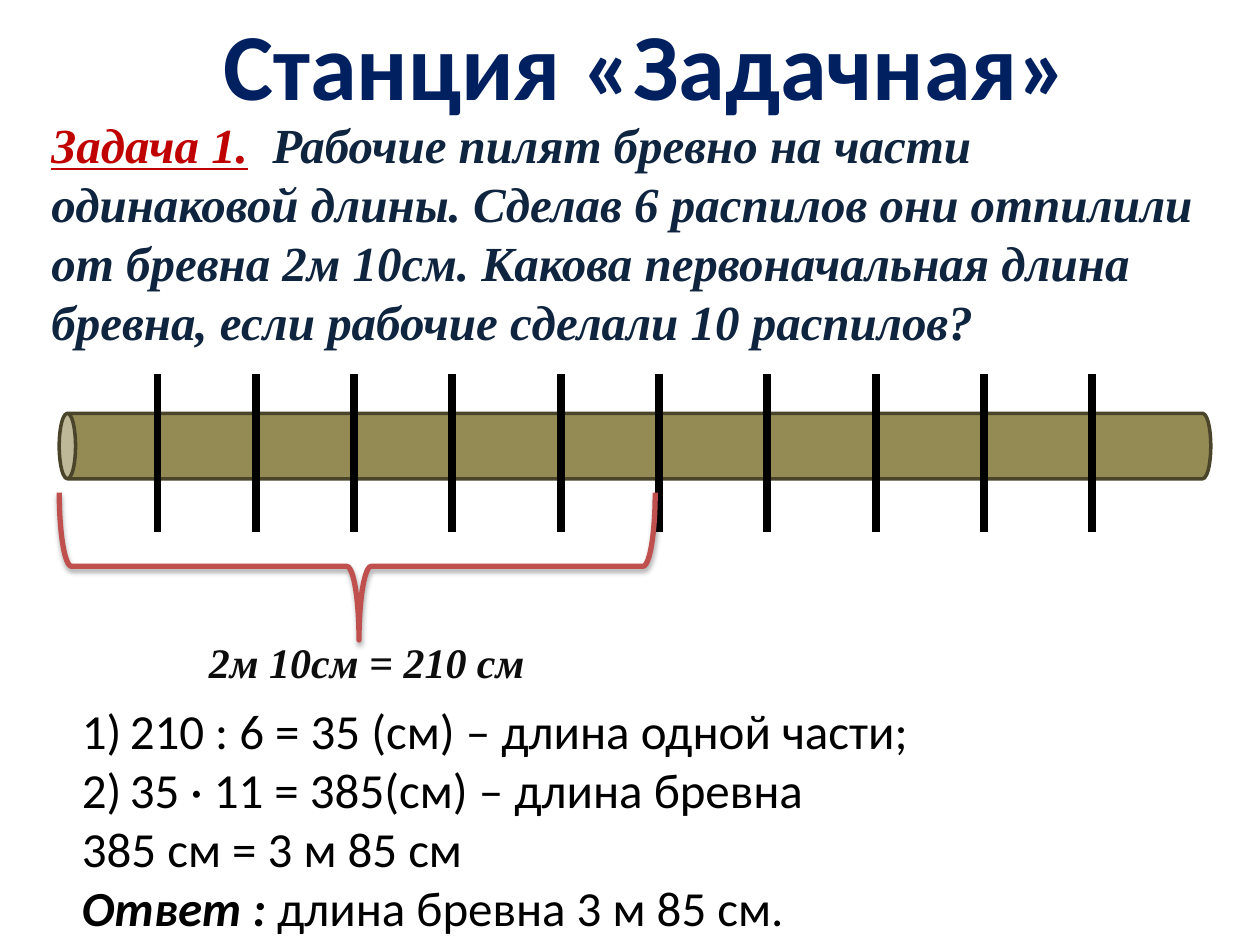
"""Build the sawn-log word problem slide."""
from dataclasses import dataclass
from itertools import accumulate

from lxml import etree
from pptx import Presentation
from pptx import util as u
from pptx.dml import color
from pptx.enum import shapes, text
from pptx.oxml import ns

SERIF = "Times New Roman"
SANS = "Calibri"
CUT_TOP, CUT_BOTTOM = 2.97, 4.22
CUT_STEPS = [1.25, 0.78, 0.78, 0.78, 0.86, 0.78, 0.86, 0.86, 0.86, 0.86]


@dataclass
class Span:
    words: str
    size: float
    font: str = SANS
    tint: str = "000000"
    bold: bool = False
    italic: bool = False
    underline: bool = False


@dataclass
class Line:
    spans: list[Span]
    numbered: bool = False


def rgb(value: str) -> color.RGBColor:
    return color.RGBColor.from_string(value)


def add_element(parent, tag: str, **attributes):
    return etree.SubElement(parent, ns.qn(tag), attributes)


def place(item, left: float, top: float, width: float, height: float) -> None:
    item.left, item.top = u.Inches(left), u.Inches(top)
    item.width, item.height = u.Inches(width), u.Inches(height)


def write_spans(para, spans: list[Span]) -> None:
    for span in spans:
        run = para.add_run()
        run.text = span.words
        font = run.font
        font.name, font.size = span.font, u.Pt(span.size)
        font.bold, font.italic = span.bold, span.italic
        font.underline = span.underline
        font.color.rgb = rgb(span.tint)


def prepare_frame(box, wrap: bool = True):
    frame = box.text_frame
    frame.word_wrap = wrap
    frame.auto_size = text.MSO_AUTO_SIZE.NONE
    frame.vertical_anchor = text.MSO_ANCHOR.TOP
    return frame


def add_text(page, spans: list[Span], at: tuple, wrap: bool = True) -> None:
    box = page.shapes.add_textbox(*map(u.Inches, at))
    write_spans(prepare_frame(box, wrap).paragraphs[0], spans)


def fill_title(page, span: Span) -> None:
    title = page.shapes.title
    place(title, 1.64, 0, 6.98, 1.01)
    para = prepare_frame(title, wrap=False).paragraphs[0]
    para.alignment = text.PP_ALIGN.CENTER
    write_spans(para, [span])


def fill_solution(page, lines: list[Line]) -> None:
    body = page.placeholders[1]
    place(body, 0.55, 5.51, 8.83, 1.99)
    frame = prepare_frame(body)
    for index, line in enumerate(lines):
        para = frame.add_paragraph() if index else frame.paragraphs[0]
        properties = para._p.get_or_add_pPr()
        properties.set("marL", str(u.Inches(0.38)))
        properties.set("indent", str(-u.Inches(0.38)))
        if line.numbered:
            add_element(properties, "a:buFont", typeface="+mj-lt")
            add_element(properties, "a:buAutoNum", type="arabicParenR")
        else:
            add_element(properties, "a:buNone")
        para.space_before = u.Pt(0)
        write_spans(para, line.spans)


def add_log(page) -> None:
    log = page.shapes.add_shape(
        shapes.MSO_SHAPE.CAN, *map(u.Inches, (4.78, -1.03, 0.52, 9.14)))
    log.rotation = 270
    log.shadow.inherit = False
    log.fill.solid()
    log.fill.fore_color.rgb = rgb("948A54")
    log.line.color.rgb = rgb("4A452A")
    log.line.width = u.Pt(2)


def add_cut(page, x: float) -> None:
    ends = map(u.Inches, (x, CUT_TOP, x, CUT_BOTTOM))
    cut = page.shapes.add_connector(shapes.MSO_CONNECTOR.STRAIGHT, *ends)
    cut.line.color.rgb = rgb("000000")
    cut.line.width = u.Pt(4.5)
    add_element(cut._element.spPr, "a:effectLst")


def add_brace(page) -> None:
    brace = page.shapes.add_shape(
        shapes.MSO_SHAPE.RIGHT_BRACE, *map(u.Inches, (2.25, 2.13, 1.17, 4.73)))
    brace.rotation = 90
    brace.adjustments[0], brace.adjustments[1] = 0.083, 0.497
    brace.fill.background()
    brace.line.color.rgb = rgb("C0504D")
    brace.line.width = u.Pt(3)
    brace.shadow.inherit = False
    effects = brace._element.spPr.find(ns.qn("a:effectLst"))
    shadow = add_element(
        effects, "a:outerShdw", blurRad=str(u.Pt(3.1)), dist=str(u.Pt(1.8)),
        dir="5400000", rotWithShape="0")
    tint = add_element(shadow, "a:srgbClr", val="000000")
    add_element(tint, "a:alpha", val="35000")


def main() -> None:
    deck = Presentation()
    deck.slide_width, deck.slide_height = u.Inches(10), u.Inches(7.5)
    page = deck.slides.add_slide(deck.slide_layouts[1])
    fill_title(page, Span("Станция «Задачная»", 54, tint="002060", bold=True))
    add_text(page, [
        Span("Задача 1.", 28, SERIF, "C00000", True, True, True),
        Span("  ", 28, SERIF, "C00000"),
        Span("Рабочие пилят бревно на части одинаковой длины. Сделав 6 распилов "
             "они отпилили от бревна 2м 10см. Какова первоначальная длина "
             "бревна, если рабочие сделали 10 распилов?",
             28, SERIF, "0F243E", True, True),
    ], (0.31, 0.86, 9.45, 1.99))
    add_log(page)
    for x in accumulate(CUT_STEPS):
        add_cut(page, x)
    add_brace(page)
    add_text(page, [Span("2м 10см = 210 см", 24, SERIF, "0D0D0D", True, True)],
             (1.56, 5, 2.73, 0.5), wrap=False)
    fill_solution(page, [
        Line([Span("210 : 6 = 35 (см) – длина одной части;", 28)], numbered=True),
        Line([Span("35 · 11 = 385(см) – длина бревна", 28)], numbered=True),
        Line([Span("385 см = 3 м 85 см", 28)]),
        Line([Span("Ответ : ", 28, bold=True, italic=True),
              Span("длина бревна 3 м 85 см.", 28)]),
    ])
    deck.save("out.pptx")


if __name__ == "__main__":
    main()
